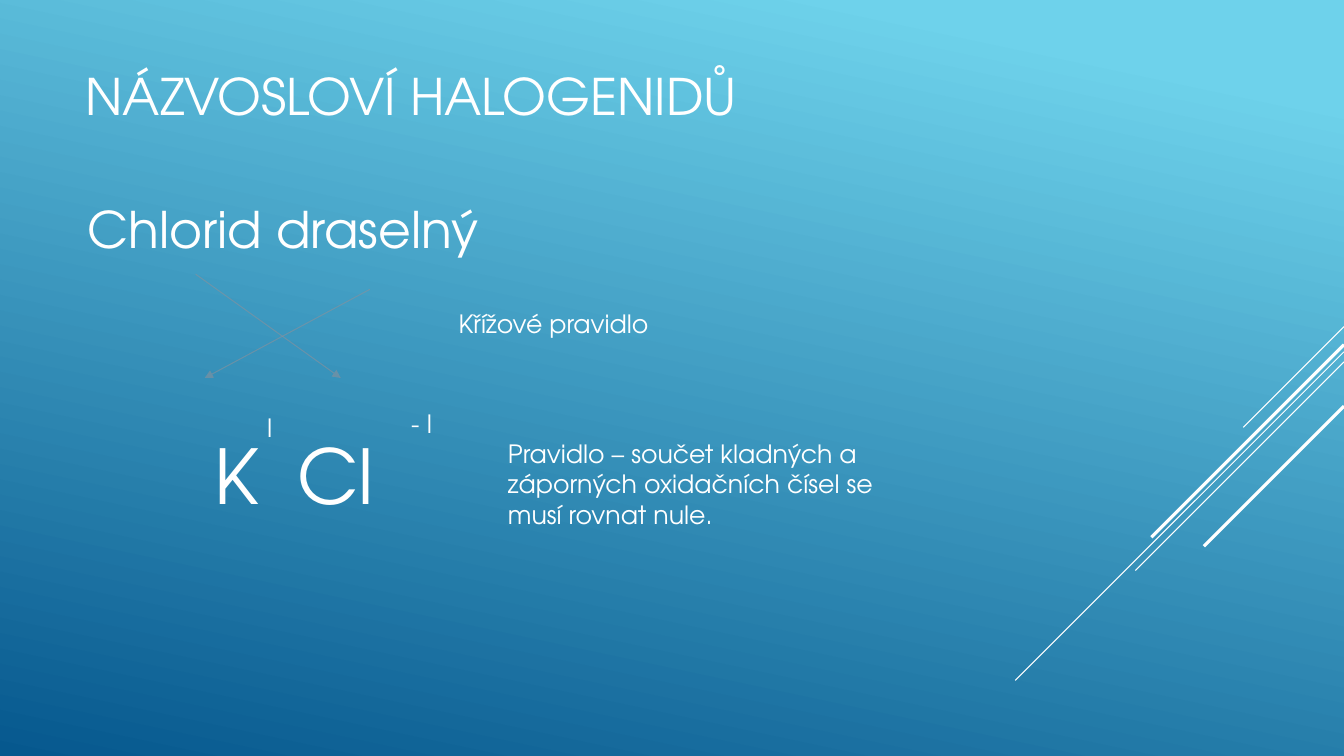
"""Build the slide on naming halides and the cross rule."""
from lxml import etree
from pptx import Presentation
from pptx.dml.color import RGBColor
from pptx.enum.shapes import MSO_CONNECTOR
from pptx.enum.text import MSO_ANCHOR, MSO_AUTO_SIZE, PP_ALIGN
from pptx.oxml.ns import qn
from pptx.util import Inches, Pt

WIDE, HIGH = 13.33, 7.5
FONT = "TeX Gyre Adventor"
WHITE = RGBColor(0xFF, 0xFF, 0xFF)
GREY = RGBColor(0x89, 0x91, 0x9C)
SKY = RGBColor(0x6E, 0xD2, 0xEB)
DEEP = RGBColor(0x06, 0x58, 0x8E)
STRAIGHT = MSO_CONNECTOR.STRAIGHT
MIDDLE = MSO_ANCHOR.MIDDLE
GROW, FIXED = MSO_AUTO_SIZE.SHAPE_TO_FIT_TEXT, MSO_AUTO_SIZE.NONE
LEFT = PP_ALIGN.LEFT

TITLE = ("NÁZVOSLOVÍ HALOGENIDŮ", (0.75, 0.43, 9.33, 1.04), 36)
# text, (left, top, width, height), size, wrap
TEXTS = [
    ("Chlorid draselný", (0.77, 1.92, 4.74, 0.71), 36, True),
    ("K", (2.03, 4.21, 0.65, 1.01), 54, False),
    ("Cl", (2.85, 4.21, 1.55, 1.01), 54, True),
    ("- I", (3.98, 4.0, 0.41, 0.4), 18, False),
    ("I", (2.55, 4.04, 0.26, 0.4), 18, False),
    ("Křížové pravidlo", (4.45, 3.01, 2.12, 0.4), 18, False),
    ("Pravidlo – součet kladných a záporných oxidačních čísel se "
     "musí rovnat nule.", (4.94, 4.3, 4.3, 1.01), 18, True),
]
# top at the right edge, reach along each axis, weight
RAYS = [(3.24, 1.0, 0.75), (3.49, 3.26, 0.75), (3.59, 2.07, 0.75),
        (3.42, 1.91, 2.25), (4.03, 1.39, 2.25)]
CROSS = [((3.67, 2.87), (2.03, 3.75)), ((1.94, 2.72), (3.38, 3.75))]


def style(shape, text, size, wrap, grow):
    frame = shape.text_frame
    frame.text = text
    frame.word_wrap = wrap
    frame.auto_size = grow
    para = frame.paragraphs[0]
    para.alignment = LEFT
    font = para.runs[0].font
    font.name, font.size = FONT, Pt(size)
    font.color.rgb = WHITE


def draw(slide, start, end, color, weight):
    line = slide.shapes.add_connector(
        STRAIGHT, *(Inches(v) for v in start + end))
    line.line.color.rgb = color
    line.line.width = Pt(weight)
    etree.SubElement(line._element.spPr, qn("a:effectLst"))
    return line


def point(line):
    edge = line.line._get_or_add_ln()
    tint = edge.find(".//" + qn("a:srgbClr"))
    etree.SubElement(tint, qn("a:alpha"), val="60000")
    etree.SubElement(edge, qn("a:tailEnd"), type="triangle")


def main():
    deck = Presentation()
    deck.slide_width, deck.slide_height = Inches(WIDE), Inches(HIGH)
    slide = deck.slides.add_slide(deck.slide_layouts.get_by_name("Title Only"))

    fill = slide.background.fill
    fill.gradient()
    fill.gradient_angle = 360 - 102
    for stop, (color, place) in zip(fill.gradient_stops,
                                    [(SKY, 0.1), (DEEP, 1.0)]):
        stop.color.rgb, stop.position = color, place

    for top, reach, weight in RAYS:
        draw(slide, (WIDE, top), (WIDE - reach, top + reach), WHITE, weight)

    text, box, size = TITLE
    title = slide.shapes.title
    title.left, title.top, title.width, title.height = map(Inches, box)
    style(title, text, size, True, FIXED)
    title.text_frame.vertical_anchor = MIDDLE

    for start, end in CROSS:
        point(draw(slide, start, end, GREY, 0.75))

    for text, box, size, wrap in TEXTS:
        label = slide.shapes.add_textbox(*map(Inches, box))
        style(label, text, size, wrap, GROW)

    deck.save("out.pptx")


if __name__ == "__main__":
    main()
